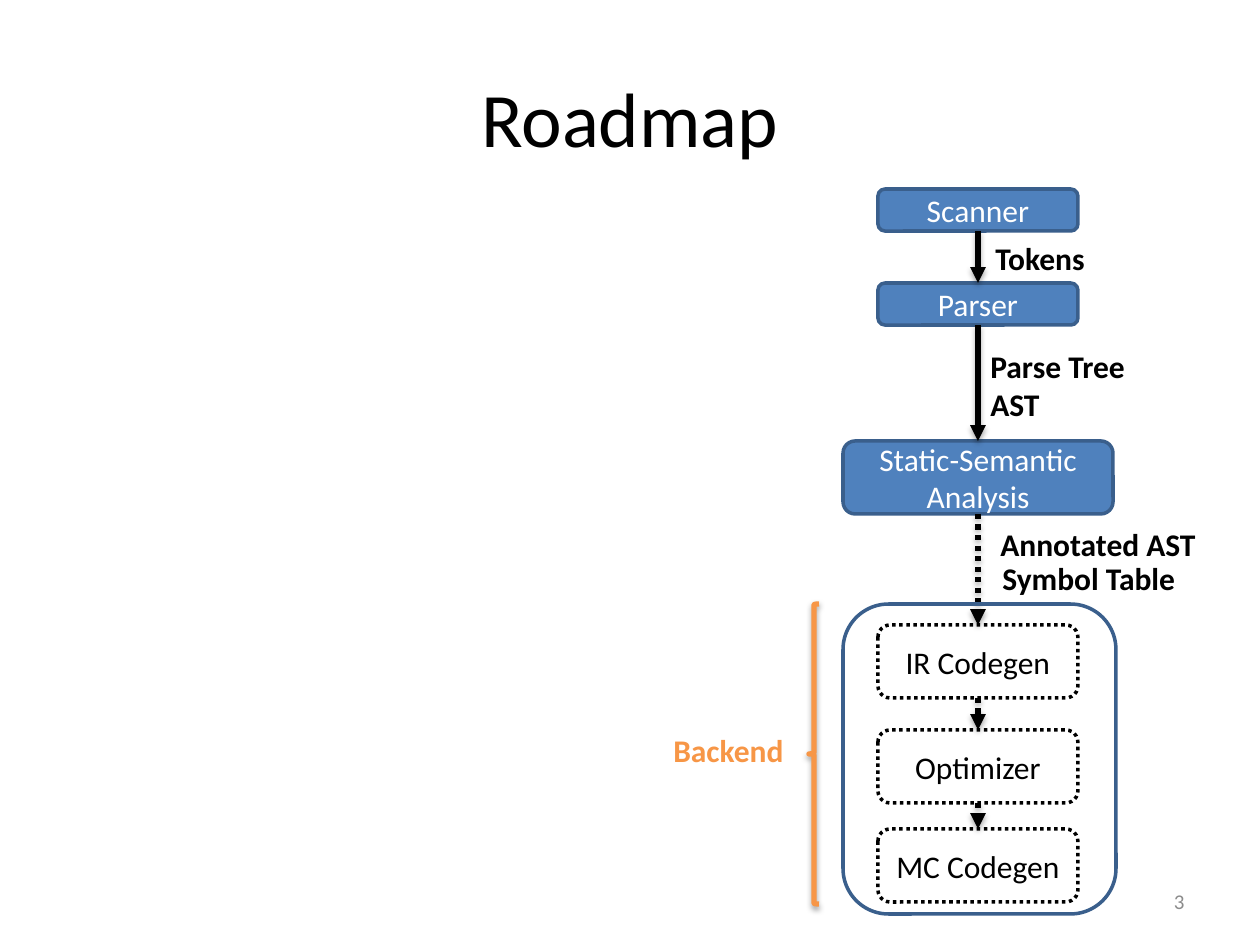
import itertools
from dataclasses import dataclass
from typing import Any

import pptx
import pptx.util
from lxml import etree
from pptx.dml.color import RGBColor
from pptx.enum.dml import MSO_LINE
from pptx.enum.shapes import MSO_CONNECTOR, MSO_SHAPE
from pptx.enum.text import MSO_ANCHOR, MSO_AUTO_SIZE, PP_ALIGN
from pptx.oxml import parse_xml
from pptx.oxml.ns import nsdecls, qn

PX_PER_INCH = 126


@dataclass(frozen=True)
class Theme:
    font: str = "Calibri"
    ink: str = "000000"
    paper: str = "FFFFFF"
    done: str = "4F81BD"
    outline: str = "3A5F8C"
    accent: str = "F79646"
    muted: str = "8C8C8C"
    title_size: int = 44
    body_size: int = 18
    number_size: int = 12
    box_line: int = 2
    arrow_line: int = 3


THEME = Theme()


@dataclass(frozen=True)
class Box:
    left: int
    top: int
    width: int
    height: int

    @property
    def bottom(self) -> int:
        return self.top + self.height

    @property
    def center(self) -> int:
        return self.left + self.width // 2

    def emu(self) -> tuple[int, ...]:
        return tuple(map(px, (self.left, self.top, self.width, self.height)))


@dataclass(frozen=True)
class Stage:
    name: str
    box: Box
    planned: bool = False


@dataclass(frozen=True)
class Label:
    lines: tuple[str, ...]
    box: Box
    color: str = THEME.ink


STAGES = (
    Stage("Scanner", Box(878, 189, 200, 42)),
    Stage("Parser", Box(878, 283, 200, 42)),
    Stage("Static-Semantic Analysis", Box(843, 441, 270, 73)),
    Stage("IR Codegen", Box(878, 625, 200, 73), planned=True),
    Stage("Optimizer", Box(878, 730, 200, 73), planned=True),
    Stage("MC Codegen", Box(878, 829, 200, 73), planned=True),
)
LABELS = (
    Label(("Tokens",), Box(983, 233, 115, 50)),
    Label(("Parse Tree", "AST"), Box(978, 341, 161, 90)),
    Label(("Annotated AST",), Box(988, 519, 229, 50)),
    Label(("Symbol Table",), Box(990, 553, 199, 50)),
    Label(("Backend",), Box(661, 725, 136, 50), THEME.accent),
)
TITLE_BOX = Box(63, 38, 1134, 158)
NUMBER_BOX = Box(903, 876, 294, 50)
BACKEND_FRAME = Box(843, 604, 273, 310)
BACKEND_BRACE = Box(809, 604, 10, 300)


def px(length: int) -> int:
    return round(length * 914400 / PX_PER_INCH)


def apply(target: Any, values: dict[str, Any]) -> None:
    for name, value in values.items():
        setattr(target, name, value)


def write(shape: Any, lines: tuple[str, ...], size: int, color: str,
          align: PP_ALIGN, bold: bool = False, **frame_format: Any) -> None:
    frame = shape.text_frame
    frame.text = "\n".join(lines)
    apply(frame, frame_format)
    for paragraph in frame.paragraphs:
        paragraph.alignment = align
        font = paragraph.runs[0].font
        apply(font, {"name": THEME.font, "size": pptx.util.Pt(size), "bold": bold})
        font.color.rgb = RGBColor.from_string(color)


def set_line(shape: Any, color: str, width: int, dotted: bool = False) -> None:
    shape.line.color.rgb = RGBColor.from_string(color)
    shape.line.width = pptx.util.Pt(width)
    if dotted:
        shape.line.dash_style = MSO_LINE.ROUND_DOT


def add_soft_shadow(shape: Any) -> None:
    shape._element.spPr.append(parse_xml(
        f'<a:effectLst {nsdecls("a")}>'
        '<a:outerShdw blurRad="40000" dist="23000" dir="5400000" rotWithShape="0">'
        f'<a:srgbClr val="{THEME.ink}"><a:alpha val="35000"/></a:srgbClr>'
        '</a:outerShdw></a:effectLst>'))


def add_outline(slide: Any, kind: MSO_SHAPE, box: Box, color: str, width: int,
                dotted: bool = False) -> Any:
    """Add an unfilled, shadowless preset shape."""
    shape = slide.shapes.add_shape(kind, *box.emu())
    shape.fill.background()
    set_line(shape, color, width, dotted)
    shape.shadow.inherit = False
    return shape


def add_stage(slide: Any, stage: Stage) -> None:
    line, fill, text = ((THEME.ink, THEME.paper, THEME.ink) if stage.planned
                        else (THEME.outline, THEME.done, THEME.paper))
    shape = add_outline(slide, MSO_SHAPE.ROUNDED_RECTANGLE, stage.box, line,
                        THEME.box_line, stage.planned)
    shape.fill.solid()
    shape.fill.fore_color.rgb = RGBColor.from_string(fill)
    write(shape, (stage.name,), THEME.body_size, text, PP_ALIGN.CENTER,
          word_wrap=True, vertical_anchor=MSO_ANCHOR.MIDDLE)


def add_arrow(slide: Any, source: Stage, target: Stage) -> None:
    arrow = slide.shapes.add_connector(
        MSO_CONNECTOR.STRAIGHT, px(source.box.center), px(source.box.bottom),
        px(target.box.center), px(target.box.top))
    set_line(arrow, THEME.ink, THEME.arrow_line, target.planned)
    etree.SubElement(arrow.line._get_or_add_ln(), qn("a:tailEnd"), type="triangle")
    add_soft_shadow(arrow)


def add_label(slide: Any, label: Label) -> None:
    write(slide.shapes.add_textbox(*label.box.emu()), label.lines, THEME.body_size,
          label.color, PP_ALIGN.LEFT, bold=True, word_wrap=False,
          auto_size=MSO_AUTO_SIZE.SHAPE_TO_FIT_TEXT)


def add_brace(slide: Any) -> None:
    brace = slide.shapes.add_shape(MSO_SHAPE.LEFT_BRACE, *BACKEND_BRACE.emu())
    brace.fill.background()
    set_line(brace, THEME.accent, THEME.arrow_line)
    add_soft_shadow(brace)


def main() -> None:
    presentation = pptx.Presentation()
    apply(presentation, {"slide_width": px(1260), "slide_height": px(945)})
    slide = presentation.slides.add_slide(presentation.slide_layouts[5])

    title = slide.shapes.title
    apply(title, dict(zip(("left", "top", "width", "height"), TITLE_BOX.emu())))
    write(title, ("Roadmap",), THEME.title_size, THEME.ink, PP_ALIGN.CENTER,
          vertical_anchor=MSO_ANCHOR.MIDDLE)
    write(slide.shapes.add_textbox(*NUMBER_BOX.emu()), ("3",), THEME.number_size,
          THEME.muted, PP_ALIGN.RIGHT, word_wrap=True,
          vertical_anchor=MSO_ANCHOR.MIDDLE)

    for stage in STAGES:
        add_stage(slide, stage)
    for source, target in itertools.pairwise(STAGES):
        add_arrow(slide, source, target)
    add_outline(slide, MSO_SHAPE.ROUNDED_RECTANGLE, BACKEND_FRAME, THEME.outline,
                THEME.box_line)
    add_brace(slide)
    for label in LABELS:
        add_label(slide, label)
    presentation.save("out.pptx")


if __name__ == "__main__":
    main()
